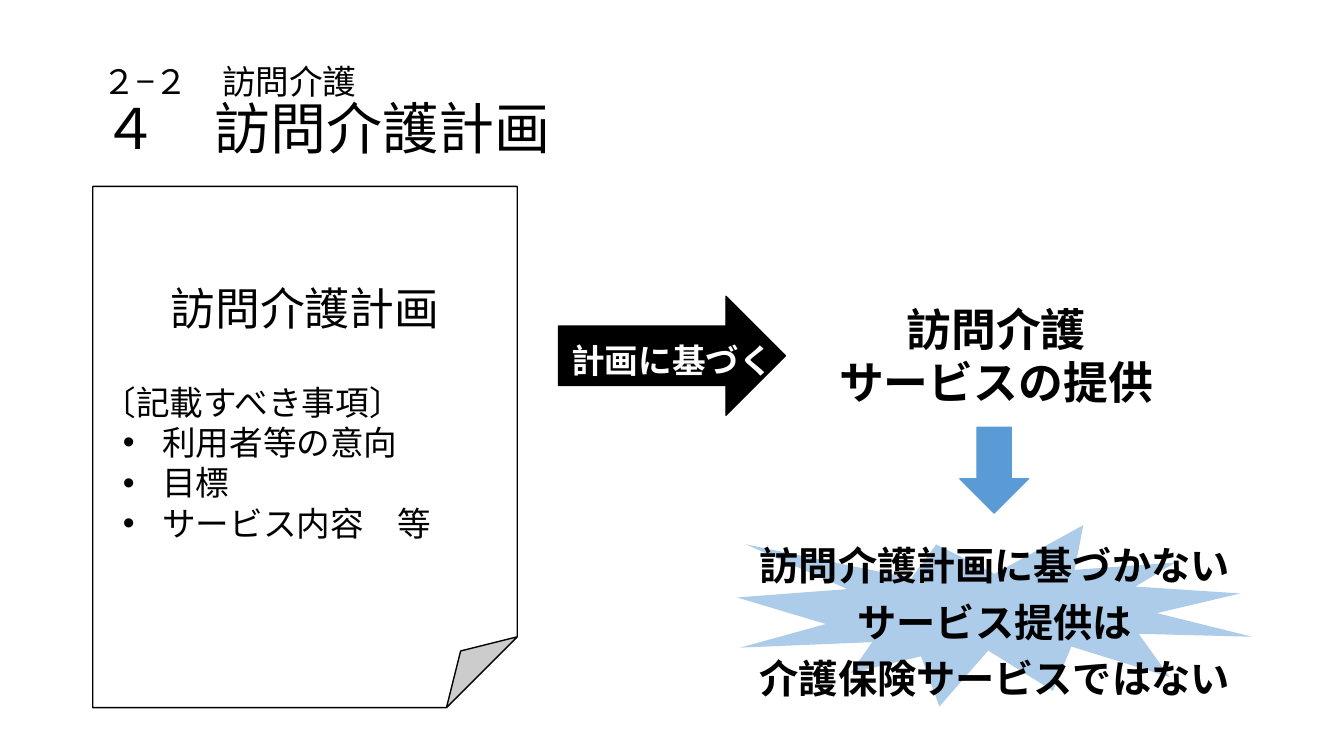
from lxml import etree
from pptx import Presentation
from pptx import util as u
from pptx.dml.color import RGBColor
from pptx.enum import shapes, text
from pptx.oxml.ns import qn

PX = 9144
ALIGN = text.PP_ALIGN
ANCHOR = text.MSO_ANCHOR
SHAPE = shapes.MSO_SHAPE


def px(length):
    return u.Emu(length * PX)


def color(value):
    return RGBColor.from_string(value)


class Canvas:
    font = "Calibri"
    black = "000000"
    white = "FFFFFF"
    blue = "5B9BD5"

    def __init__(self, page):
        self.page = page

    def shape(self, kind, bounds, fill, line=None, alpha=None):
        item = self.page.shapes.add_shape(kind, *map(px, bounds))
        item.shadow.inherit = False
        item.fill.solid()
        item.fill.fore_color.rgb = color(fill)
        if alpha:
            tint = item._element.spPr.find(f".//{qn('a:srgbClr')}")
            etree.SubElement(tint, qn("a:alpha"), val=str(alpha * 1000))
        if line:
            item.line.color.rgb = color(line)
            item.line.width = u.Pt(1)
        else:
            item.line.fill.background()
        return item

    def textbox(self, bounds, anchor=ANCHOR.TOP, wrap=False):
        box = self.page.shapes.add_textbox(*map(px, bounds))
        box.text_frame.word_wrap = wrap
        box.text_frame.vertical_anchor = anchor
        return box

    def add_lines(self, box, lines, size, align=ALIGN.CENTER, bold=False,
                  ink=black, spacing=1.0, before=0, bullet=False):
        frame = box.text_frame
        for line in lines:
            para = frame.paragraphs[0]
            if para.runs:
                para = frame.add_paragraph()
            if bullet:
                self.bullet(para)
            para.add_run().text = line
            para.alignment = align
            para.line_spacing = spacing
            para.space_before = u.Pt(before)
            para.font.name = self.font
            para.font.size = u.Pt(size)
            para.font.bold = bold
            para.font.color.rgb = color(ink)

    def bullet(self, para):
        properties = para._p.get_or_add_pPr()
        properties.set("marL", str(px(59)))
        properties.set("indent", str(px(-39)))
        etree.SubElement(properties, qn("a:buFont"), typeface="Arial")
        etree.SubElement(properties, qn("a:buChar"), char="•")


def main():
    deck = Presentation()
    deck.slide_width, deck.slide_height = px(1333), px(750)
    canvas = Canvas(deck.slides.add_slide(deck.slide_layouts[6]))

    title = canvas.textbox((92, 40, 1150, 145), ANCHOR.MIDDLE, wrap=True)
    canvas.add_lines(title, ["２−２　訪問介護"], 24, ALIGN.LEFT, spacing=0.9)
    canvas.add_lines(title, ["４　訪問介護計画"], 40, ALIGN.LEFT, spacing=0.9)

    plan = canvas.shape(SHAPE.FOLDED_CORNER, (92, 185, 421, 517), canvas.white, canvas.black)
    plan.text_frame.vertical_anchor = ANCHOR.MIDDLE
    canvas.add_lines(plan, ["訪問介護計画"], 32)
    canvas.add_lines(plan, ["〔記載すべき事項〕"], 24, ALIGN.JUSTIFY, before=34)
    canvas.add_lines(plan, ["利用者等の意向", "目標", "サービス内容　等"], 24,
                     ALIGN.JUSTIFY, bullet=True)

    warning_bounds = (731, 521, 511, 180)
    canvas.shape(SHAPE.EXPLOSION1, warning_bounds, canvas.blue, alpha=50)
    warning = canvas.textbox(warning_bounds, ANCHOR.BOTTOM)
    canvas.add_lines(warning, ["訪問介護計画に基づかない", "サービス提供は", "介護保険サービスではない"],
                     28, bold=True, spacing=1.2)

    service = canvas.textbox((821, 294, 334, 118))
    canvas.add_lines(service, ["訪問介護", "サービスの提供"], 32, bold=True)

    canvas.shape(SHAPE.RIGHT_ARROW, (554, 294, 225, 118), canvas.black, canvas.black)
    basis = canvas.textbox((554, 324, 225, 59), wrap=True)
    canvas.add_lines(basis, ["計画に基づく"], 24, bold=True, ink=canvas.white, spacing=1.2)

    canvas.shape(SHAPE.DOWN_ARROW, (952, 424, 68, 85), canvas.blue, canvas.blue)

    deck.save("out.pptx")


if __name__ == "__main__":
    main()
